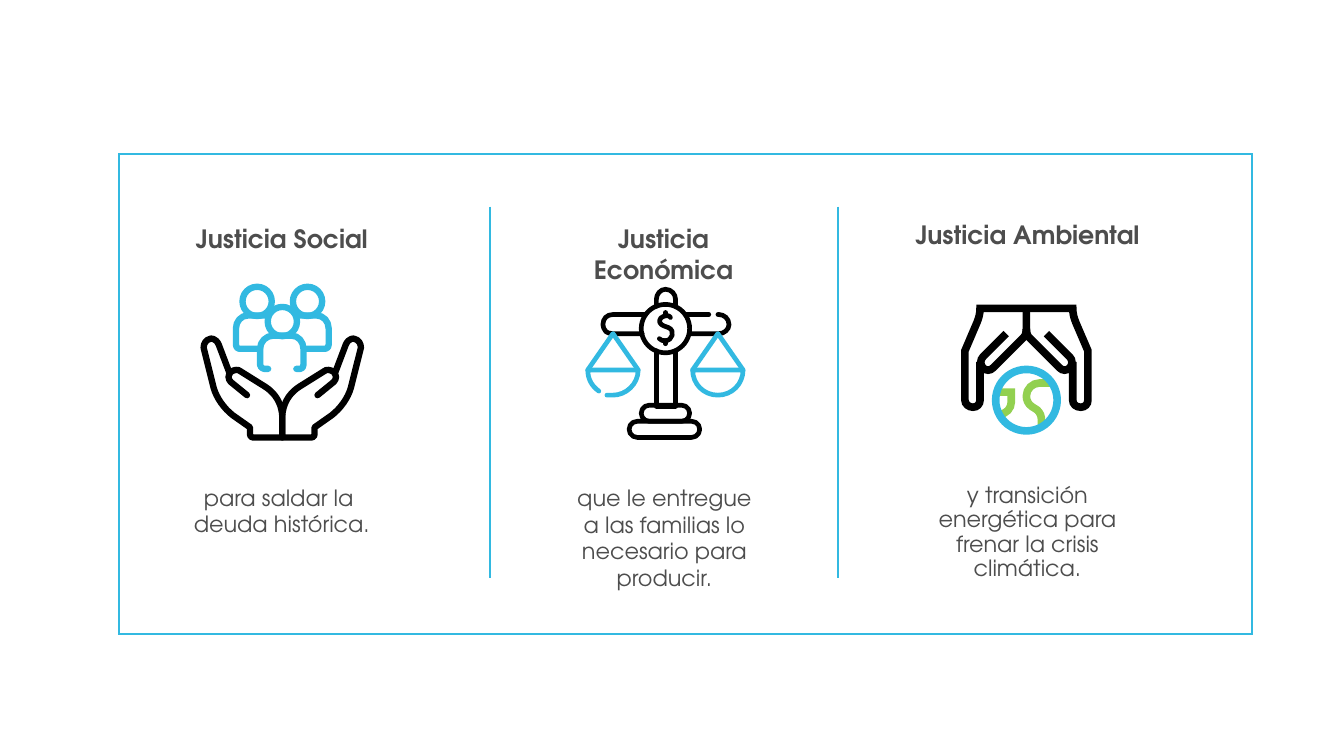
from lxml import etree
from pptx import Presentation
from pptx.dml.color import RGBColor
from pptx.enum.shapes import MSO_CONNECTOR as CONN, MSO_SHAPE as SHAPE
from pptx.enum.text import MSO_ANCHOR as ANCHOR, MSO_AUTO_SIZE as AUTO, PP_ALIGN as ALIGN
from pptx.oxml.ns import qn
from pptx.util import Inches, Pt

FONT = "TeX Gyre Adventor"
COLORS = {"blue": "32B9E1", "text": "4D4D4D", "black": "000000", "green": "92D050"}


# ---- Lines and outlines ----
def style_line(sp, color, width, rounded=False):
    sp.line.color.rgb = RGBColor.from_string(COLORS[color])
    sp.line.width = Pt(width)
    ln = sp.element.spPr.find(qn("a:ln"))
    if rounded:
        ln.set("cap", "rnd")
        etree.SubElement(ln, qn("a:round"))
    else:
        etree.SubElement(ln, qn("a:miter")).set("lim", "800000")


def style_outline(sp, *pen):
    sp.shadow.inherit = False
    sp.fill.background()
    style_line(sp, *pen)


def add_line(s, x1, y1, x2, y2, *pen):
    sp = s.shapes.add_connector(CONN.STRAIGHT, Inches(x1), Inches(y1), Inches(x2), Inches(y2))
    style_line(sp, *pen)
    etree.SubElement(sp.element.spPr, qn("a:effectLst"))


def add_outline(s, shape, x, y, w, h, *pen):
    sp = s.shapes.add_shape(shape, Inches(x), Inches(y), Inches(w), Inches(h))
    style_outline(sp, *pen)
    return sp


def add_circle(s, cx, cy, radius, *pen):
    add_outline(s, SHAPE.OVAL, cx - radius, cy - radius, 2 * radius, 2 * radius, *pen)


def add_stroke(s, steps, *pen, axis=None, close=False):
    """Draw lines (x, y) and cubic curves (three points), reflected about x = axis if given."""
    pairs = [pair for step in steps for pair in zip(step[::2], step[1::2])]
    points = [(Inches(x if axis is None else 2 * axis - x), Inches(y)) for x, y in pairs]
    builder = s.shapes.build_freeform(*points[0])
    builder.add_line_segments(points[1:], close=close)
    sp = builder.convert_to_shape()
    # Join the three segments of each curve into one Bézier command
    segments = iter(list(sp.element.iter(qn("a:lnTo"))))
    for step in steps[1:]:
        curve = next(segments)
        if len(step) == 6:
            curve.tag = qn("a:cubicBezTo")
            for segment in (next(segments), next(segments)):
                curve.append(segment[0])
                segment.getparent().remove(segment)
    style_outline(sp, *pen)


def add_pair(s, steps, axis, *pen):
    for mirror in (None, axis):
        add_stroke(s, steps, *pen, axis=mirror)


# ---- Text ----
def add_text(s, x, y, w, h, text, size, bold=False, compact=False):
    tf = s.shapes.add_textbox(Inches(x), Inches(y), Inches(w), Inches(h)).text_frame
    tf.word_wrap = True
    tf.text = text
    if compact:
        tf.vertical_anchor = ANCHOR.MIDDLE
        tf.margin_left = tf.margin_right = Inches(0.05)
        tf.margin_top = tf.margin_bottom = Inches(0.02)
    else:
        tf.auto_size = AUTO.SHAPE_TO_FIT_TEXT
    for p in tf.paragraphs:
        p.alignment = ALIGN.CENTER
        if compact:
            p.line_spacing = 0.9
        for r in p.runs:
            r.font.name = FONT
            r.font.size = Pt(size)
            r.font.bold = bold
            r.font.color.rgb = RGBColor.from_string(COLORS["text"])


# ---- Icons ----
def add_people_icon(s):
    axis = 2.8
    black, blue = ("black", 4.54, True), ("blue", 4.54, True)
    hand = [(2.45, 3.92), (2.29, 3.79), (2.26, 3.76, 2.26, 3.72, 2.29, 3.69),
            (2.31, 3.68, 2.32, 3.67, 2.34, 3.67), (2.36, 3.67, 2.37, 3.67, 2.38, 3.68),
            (2.62, 3.83), (2.82, 3.95, 2.8, 4.16, 2.8, 4.16), (2.8, 4.34), (2.51, 4.34),
            (2.49, 4.34, 2.48, 4.33, 2.48, 4.31), (2.48, 4.24), (2.31, 4.12),
            (2.22, 4.05, 2.15, 3.95, 2.12, 3.85), (2.02, 3.45),
            (2.02, 3.41, 2.04, 3.37, 2.09, 3.36), (2.09, 3.36, 2.14, 3.35, 2.17, 3.42),
            (2.28, 3.71)]
    front_body = [(2.66, 3.66), (2.62, 3.66), (2.6, 3.66, 2.58, 3.64, 2.58, 3.62),
                  (2.58, 3.46), (2.58, 3.39, 2.64, 3.33, 2.71, 3.33), (2.89, 3.33),
                  (2.96, 3.33, 3.01, 3.39, 3.01, 3.46), (3.01, 3.62),
                  (3.01, 3.64, 3, 3.66, 2.98, 3.66), (2.94, 3.66)]
    back_body = [(2.58, 3.46), (2.37, 3.46), (2.35, 3.46, 2.34, 3.44, 2.34, 3.42),
                 (2.34, 3.26), (2.34, 3.19, 2.39, 3.13, 2.46, 3.13), (2.65, 3.13)]
    add_pair(s, hand, axis, *black)
    add_stroke(s, front_body, *blue)
    add_pair(s, back_body, axis, *blue)
    for cx, cy in ((axis, 3.19), (axis - 0.25, 2.99), (axis + 0.25, 2.99)):
        add_circle(s, cx, cy, 0.145, *blue)


def add_scales_icon(s):
    axis = 6.6
    black, blue = ("black", 3.34, True), ("blue", 3.34, True)
    # Post and beam
    add_stroke(s, [(6.51, 3.04), (6.51, 2.97), (6.51, 2.92, 6.55, 2.87, 6.6, 2.87),
                   (6.66, 2.87, 6.7, 2.92, 6.7, 2.97), (6.7, 3.04)], *black)
    add_stroke(s, [(6.7, 3.48), (6.7, 4.03), (6.51, 4.03), (6.51, 3.48)], *black)
    add_stroke(s, [(7.12, 3.12), (7.13, 3.12), (7.18, 3.12, 7.23, 3.16, 7.23, 3.22),
                   (7.23, 3.27, 7.18, 3.31, 7.13, 3.31), (6.84, 3.31)], *black)
    add_line(s, 7.03, 3.12, 6.8, 3.12, *black)
    add_stroke(s, [(6.37, 3.31), (6.08, 3.31), (6.05, 3.31, 6.02, 3.3, 6.01, 3.29),
                   (5.99, 3.27, 5.98, 3.24, 5.98, 3.22),
                   (5.98, 3.16, 6.02, 3.12, 6.08, 3.12), (6.4, 3.12)], *black)
    # Pans
    add_pair(s, [(5.83, 3.67), (6.08, 3.31), (6.33, 3.67)], axis, *blue)
    add_stroke(s, [(7.37, 3.67), (7.37, 3.81, 7.26, 3.92, 7.12, 3.92),
                   (6.98, 3.92, 6.87, 3.81, 6.87, 3.67)], *blue, close=True)
    add_stroke(s, [(6.02, 3.92), (6.04, 3.92, 6.06, 3.92, 6.08, 3.92),
                   (6.21, 3.92, 6.33, 3.81, 6.33, 3.67), (5.83, 3.67),
                   (5.83, 3.76, 5.87, 3.83, 5.94, 3.88)], *blue)
    # Coin
    add_circle(s, axis, 3.26, 0.24, *black)
    add_stroke(s, [(6.65, 3.15), (6.65, 3.14, 6.62, 3.12, 6.58, 3.14),
                   (6.54, 3.15, 6.53, 3.2, 6.56, 3.22), (6.57, 3.23, 6.6, 3.24, 6.63, 3.25),
                   (6.7, 3.28, 6.67, 3.38, 6.6, 3.38),
                   (6.57, 3.38, 6.56, 3.38, 6.54, 3.36)], *black)
    for top, bottom in ((3.1, 3.13), (3.38, 3.41)):
        add_line(s, axis, top, axis, bottom, *black)
    # Base
    for x, y, w in ((6.36, 4.02, 0.48), (6.24, 4.18, 0.7)):
        sp = add_outline(s, SHAPE.ROUNDED_RECTANGLE, x, y, w, 0.16, *black)
        sp.adjustments[0] = 0.5


def add_planet_icon(s):
    axis, width = 10.18, 5.45
    land = [(10.44, 3.8), (10.31, 3.8), (10.24, 3.8, 10.18, 3.86, 10.18, 3.93),
            (10.18, 3.97, 10.2, 4.01, 10.23, 4.03), (10.29, 4.07),
            (10.32, 4.1, 10.33, 4.13, 10.33, 4.17), (10.33, 4.23)]
    island = [(9.91, 4.11), (9.98, 4.11, 10.03, 4.05, 10.03, 3.99), (10.03, 3.89), (9.89, 3.89)]
    hands = [(9.72, 3.59), (9.72, 3.97), (9.72, 4.01, 9.69, 4.04, 9.65, 4.04),
             (9.61, 4.04, 9.57, 4.01, 9.57, 3.97), (9.57, 3.48), (9.69, 3.2),
             (9.71, 3.15, 9.72, 3.11, 9.72, 3.06), (10.64, 3.06),
             (10.64, 3.11, 10.65, 3.15, 10.67, 3.2), (10.79, 3.48), (10.79, 3.97),
             (10.79, 4.01, 10.76, 4.04, 10.72, 4.04),
             (10.67, 4.04, 10.64, 4.01, 10.64, 3.97), (10.64, 3.59)]
    thumb = [(9.98, 3.31), (9.75, 3.54), (9.72, 3.57, 9.72, 3.62, 9.75, 3.65),
             (9.78, 3.68, 9.82, 3.68, 9.85, 3.65), (10.14, 3.36),
             (10.17, 3.34, 10.18, 3.3, 10.18, 3.26)]
    for part in (land, island):
        add_stroke(s, part, "green", width)
    add_circle(s, axis, 3.97, 0.305, "blue", width)
    add_stroke(s, hands, "black", width)
    add_stroke(s, thumb, "black", width, axis=axis)
    add_stroke(s, thumb + [(axis, 3.06)], "black", width)


def main():
    prs = Presentation()
    prs.slide_width, prs.slide_height = Inches(13.33), Inches(7.5)
    s = prs.slides.add_slide(prs.slide_layouts[6])

    # Frame
    add_outline(s, SHAPE.RECTANGLE, 1.18, 1.53, 11.24, 4.76, "blue", 1)

    # Headings and descriptions
    add_text(s, 9, 4.75, 2.38, 1.07,
             "y transición energética para frenar la crisis climática.", 16, compact=True)
    add_text(s, 9, 2.17, 2.38, 0.34, "Justicia Ambiental", 18, bold=True, compact=True)
    add_text(s, 1.42, 4.75, 2.75, 0.64, "para saldar la \ndeuda histórica.", 16)
    add_text(s, 1.42, 2.17, 2.75, 0.4, "Justicia Social", 18, bold=True)
    add_text(s, 5.55, 4.75, 2.08, 1.21,
             "que le entregue a las familias lo necesario para producir.", 16)
    add_text(s, 5.48, 2.17, 2.2, 0.4, "Justicia Económica", 18, bold=True)

    # Column dividers
    for x in (4.86, 8.31):
        add_line(s, x, 2.05, x, 5.73, "blue", 1.5)

    # One group per icon
    for add_icon in (add_people_icon, add_planet_icon, add_scales_icon):
        add_icon(s.shapes.add_group_shape())
    prs.save("out.pptx")


if __name__ == "__main__":
    main()
